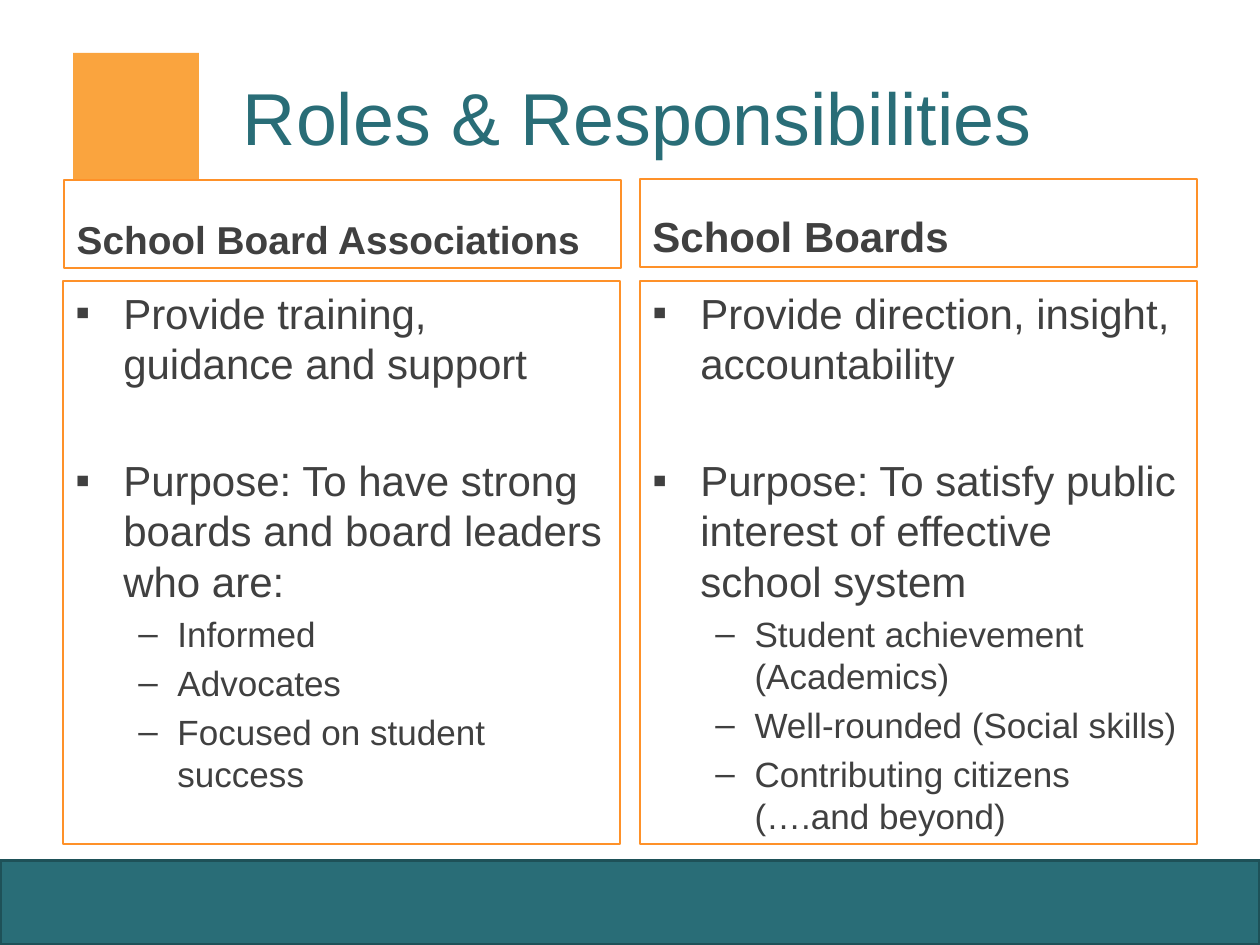
"""Build the Roles & Responsibilities comparison slide."""
from lxml.etree import SubElement
from pptx import Presentation
from pptx.dml.color import RGBColor
from pptx.enum.shapes import MSO_SHAPE as Shape
from pptx.enum.text import MSO_ANCHOR as Anchor, PP_ALIGN as Align
from pptx.oxml.ns import qn
from pptx.util import Inches, Pt

COLORS = {"teal": "296D77", "dark_teal": "1E5158", "amber": "FAA43E",
          "orange": "FE9129", "text": "404040"}
TITLE = "Roles & Responsibilities"
COLUMNS = [
    {"heading": "School Board Associations", "size": 22.2, "line": 1,
     "heading_at": (0.51, 1.43), "body_left": 0.5,
     "points": ["Provide training, guidance and support",
                "Purpose: To have strong boards and board leaders who are:"],
     "details": ["Informed", "Advocates", "Focused on student success"]},
    {"heading": "School Boards", "size": 24, "line": 0.75,
     "heading_at": (5.08, 1.42), "body_left": 5.08,
     "points": ["Provide direction, insight, accountability",
                "Purpose: To satisfy public interest of effective school system"],
     "details": ["Student achievement (Academics)", "Well-rounded (Social skills)",
                 "Contributing citizens (….and beyond)"]},
]
COLUMN_WIDTH, HEADING_HEIGHT, BODY_TOP, BODY_HEIGHT = 4.42, 0.7, 2.23, 4.47
LEVELS = [{"bullet": "▪", "size": 24, "margin": 0.38, "hang": 0.38},
          {"bullet": "–", "size": 20, "margin": 0.81, "hang": 0.31}]
SPACE_RATIO, POINT_GAP = 0.2, 38


def color(name):
    return RGBColor.from_string(COLORS[name])


def add_box(slide, box, fill=None, line=None, width=0.75):
    shape = slide.shapes.add_shape(Shape.RECTANGLE, *map(Inches, box))
    shape.shadow.inherit = False
    if fill:
        shape.fill.solid()
        shape.fill.fore_color.rgb = color(fill)
    else:
        shape.fill.background()
    if line:
        shape.line.color.rgb = color(line)
        shape.line.width = Pt(width)
    else:
        shape.line.fill.background()
    return shape


def set_frame(shape, anchor):
    frame = shape.text_frame
    for name, value in {"word_wrap": True, "vertical_anchor": anchor}.items():
        setattr(frame, name, value)
    return frame


def write(paragraph, text, size, ink="text", bold=False, **spacing):
    run = paragraph.add_run()
    run.text = text
    for name, value in {"name": "Arial", "size": Pt(size), "bold": bold}.items():
        setattr(run.font, name, value)
    run.font.color.rgb = color(ink)
    for name, value in {"alignment": Align.LEFT, **spacing}.items():
        setattr(paragraph, name, value)


def add_bullet(paragraph, level):
    properties = paragraph._p.get_or_add_pPr()
    properties.set("marL", str(Inches(level["margin"])))
    properties.set("indent", str(-Inches(level["hang"])))
    SubElement(properties, qn("a:buFont"), typeface="Arial")
    SubElement(properties, qn("a:buChar"), char=level["bullet"])


def add_column(slide, column):
    heading_box = (*column["heading_at"], COLUMN_WIDTH, HEADING_HEIGHT)
    heading = add_box(slide, heading_box, line="orange", width=column["line"])
    write(set_frame(heading, Anchor.BOTTOM).paragraphs[0], column["heading"],
          column["size"], bold=True)

    body_box = (column["body_left"], BODY_TOP, COLUMN_WIDTH, BODY_HEIGHT)
    frame = set_frame(add_box(slide, body_box, line="orange"), Anchor.TOP)
    items = [(0, text) for text in column["points"]]
    items += [(1, text) for text in column["details"]]
    for index, (depth, text) in enumerate(items):
        level = LEVELS[depth]
        paragraph = frame.add_paragraph() if index else frame.paragraphs[0]
        gap = POINT_GAP if index and depth == 0 else level["size"] * SPACE_RATIO
        write(paragraph, text, level["size"], level=depth, space_before=Pt(gap))
        add_bullet(paragraph, level)


def main():
    presentation = Presentation()
    presentation.slide_width, presentation.slide_height = Inches(10), Inches(7.5)
    slide = presentation.slides.add_slide(presentation.slide_layouts[6])
    add_box(slide, (0, 6.83, 10, 0.67), "teal", "dark_teal", 2)
    add_box(slide, (0.58, 0.42, 1, 1), "amber")
    title = slide.shapes.add_textbox(*map(Inches, (1.83, 0.3, 7.67, 1.25)))
    write(set_frame(title, Anchor.MIDDLE).paragraphs[0], TITLE, 42, "teal")
    for column in COLUMNS:
        add_column(slide, column)
    presentation.save("out.pptx")


if __name__ == "__main__":
    main()
